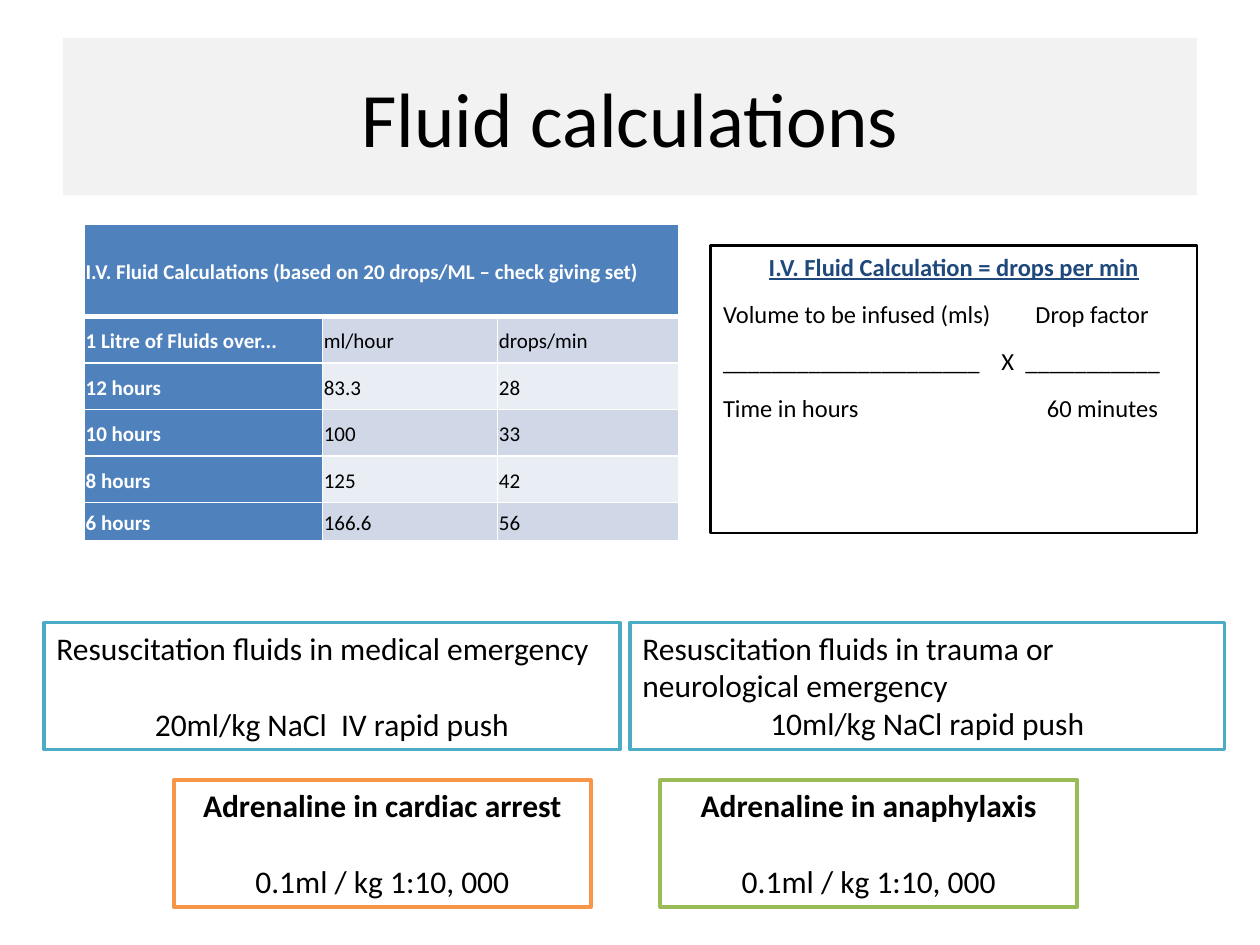
from lxml.etree import SubElement
from pptx import Presentation
from pptx.dml.color import RGBColor
from pptx.enum.shapes import MSO_SHAPE
from pptx.enum.text import MSO_ANCHOR, PP_ALIGN
from pptx.oxml.ns import qn
from pptx.util import Inches, Pt

BLUE = "4F81BD"
AQUA = "4BACC6"
BANDS = ("D0D8E8", "E9EDF4")
HEAD = "I.V. Fluid Calculations (based on 20 drops/ML – check giving set)"
RATES = [
    ("1 Litre of Fluids over...", "ml/hour", "drops/min"),
    ("12 hours", "83.3", "28"),
    ("10 hours", "100", "33"),
    ("8 hours", "125", "42"),
    ("6 hours", "166.6", "56"),
]
COLS = (1.89, 1.39, 1.44)
ROWS = (0.73, 0.37, 0.37, 0.37, 0.37, 0.3)

# Each formula line: text, then tab stops in inches
FORMULA = [
    ("Volume to be infused (mls)\tDrop factor", (2.48,)),
    ("_____________________\tX\t___________", (2.21, 2.4)),
    ("Time in hours\t60 minutes", (2.57,)),
]


def paint(target, color):
    target.solid()
    target.fore_color.rgb = RGBColor.from_string(color)


def add_run(para, text, size, color="000000", bold=False):
    run = para.add_run()
    run.text = text
    font = run.font
    font.name, font.size, font.bold = "Calibri", Pt(size), bold
    font.color.rgb = RGBColor.from_string(color)
    return run


def next_para(frame):
    """Return the first paragraph while it is empty, else a new one."""
    last = frame.paragraphs[-1]
    return frame.add_paragraph() if last.runs else last


def add_title(slide, text):
    title = slide.shapes.title
    title.left, title.top = Inches(0.5), Inches(0.3)
    title.width, title.height = Inches(9), Inches(1.25)
    paint(title.fill, "F2F2F2")
    frame = title.text_frame
    frame.vertical_anchor = MSO_ANCHOR.MIDDLE
    para = frame.paragraphs[0]
    para.alignment = PP_ALIGN.CENTER
    add_run(para, text, 44)


def add_box(slide, place, color, width):
    box = slide.shapes.add_shape(MSO_SHAPE.RECTANGLE, *map(Inches, place))
    box.shadow.inherit = False
    paint(box.fill, "FFFFFF")
    paint(box.line.fill, color)
    box.line.width = Pt(width)
    frame = box.text_frame
    frame.word_wrap = True
    frame.vertical_anchor = MSO_ANCHOR.TOP
    return frame


def add_dose(slide, place, color, head, dose, bold=False, gap=22):
    """Add a framed heading with its dose below; gap is in points."""
    frame = add_box(slide, place, color, 2)
    para = next_para(frame)
    para.alignment = PP_ALIGN.CENTER if bold else PP_ALIGN.LEFT
    add_run(para, head, 18, bold=bold)
    para = next_para(frame)
    para.alignment = PP_ALIGN.CENTER
    para.space_before = Pt(gap)
    add_run(para, dose, 18)


def set_tabs(para, stops):
    tabs = SubElement(para._p.get_or_add_pPr(), qn("a:tabLst"))
    for stop in stops:
        SubElement(tabs, qn("a:tab"), pos=str(Inches(stop)), algn="l")


def add_formula(slide):
    frame = add_box(slide, (5.64, 1.95, 3.86, 2.28), "000000", 1.5)
    para = next_para(frame)
    para.alignment = PP_ALIGN.CENTER
    para.space_after = Pt(10)
    run = add_run(para, "I.V. Fluid Calculation = drops per min", 14, "1F497D", True)
    run.font.underline = True
    for text, stops in FORMULA:
        para = next_para(frame)
        para.alignment = PP_ALIGN.LEFT
        para.space_after = Pt(10)
        set_tabs(para, stops)
        add_run(para, text, 14)


def set_edges(cell, base):
    """Draw white cell borders; base is the width of the lower one in points."""
    props = cell._tc.get_or_add_tcPr()
    for tag, width in (("lnL", 1), ("lnR", 1), ("lnT", 1), ("lnB", base)):
        edge = SubElement(props, qn("a:" + tag), w=str(Pt(width)))
        fill = SubElement(edge, qn("a:solidFill"))
        SubElement(fill, qn("a:srgbClr"), val="FFFFFF")


def fill_cell(cell, text, color, head, base=1):
    set_edges(cell, base)
    paint(cell.fill, color)
    cell.vertical_anchor = MSO_ANCHOR.MIDDLE
    cell.margin_left = cell.margin_right = Inches(0.01)
    cell.margin_top = cell.margin_bottom = Inches(0.01)
    para = cell.text_frame.paragraphs[0]
    para.line_spacing = 1.15
    if text:
        add_run(para, text, 12, "FFFFFF" if head else "000000", head)


def add_rates(slide):
    place = map(Inches, (0.67, 1.78, sum(COLS), sum(ROWS)))
    table = slide.shapes.add_table(len(ROWS), len(COLS), *place).table
    for col, width in zip(table.columns, COLS):
        col.width = Inches(width)
    for row, height in zip(table.rows, ROWS):
        row.height = Inches(height)
    for c, text in enumerate((HEAD, "", "")):
        fill_cell(table.cell(0, c), text, BLUE, True, 3)
    table.cell(0, 0).merge(table.cell(0, len(COLS) - 1))
    for r, row in enumerate(RATES):
        for c, text in enumerate(row):
            color = BANDS[r % 2] if c else BLUE
            fill_cell(table.cell(r + 1, c), text, color, c == 0)


def main():
    deck = Presentation()
    deck.slide_width, deck.slide_height = Inches(10), Inches(7.5)
    slide = deck.slides.add_slide(deck.slide_layouts[5])
    add_title(slide, "Fluid calculations")
    add_rates(slide)
    add_formula(slide)
    dose = "0.1ml / kg 1:10, 000"
    add_dose(slide, (1.38, 6.19, 3.31, 1.01), "F79646",
             "Adrenaline in cardiac arrest", dose, True)
    add_dose(slide, (5.24, 6.19, 3.31, 1.01), "9BBB59",
             "Adrenaline in anaphylaxis", dose, True)
    add_dose(slide, (0.35, 4.94, 4.57, 1.01), AQUA,
             "Resuscitation fluids in medical emergency",
             "20ml/kg NaCl  IV rapid push")
    add_dose(slide, (5, 4.94, 4.72, 1.01), AQUA,
             "Resuscitation fluids in trauma or neurological emergency",
             "10ml/kg NaCl rapid push", gap=0)
    deck.save("out.pptx")


if __name__ == "__main__":
    main()
